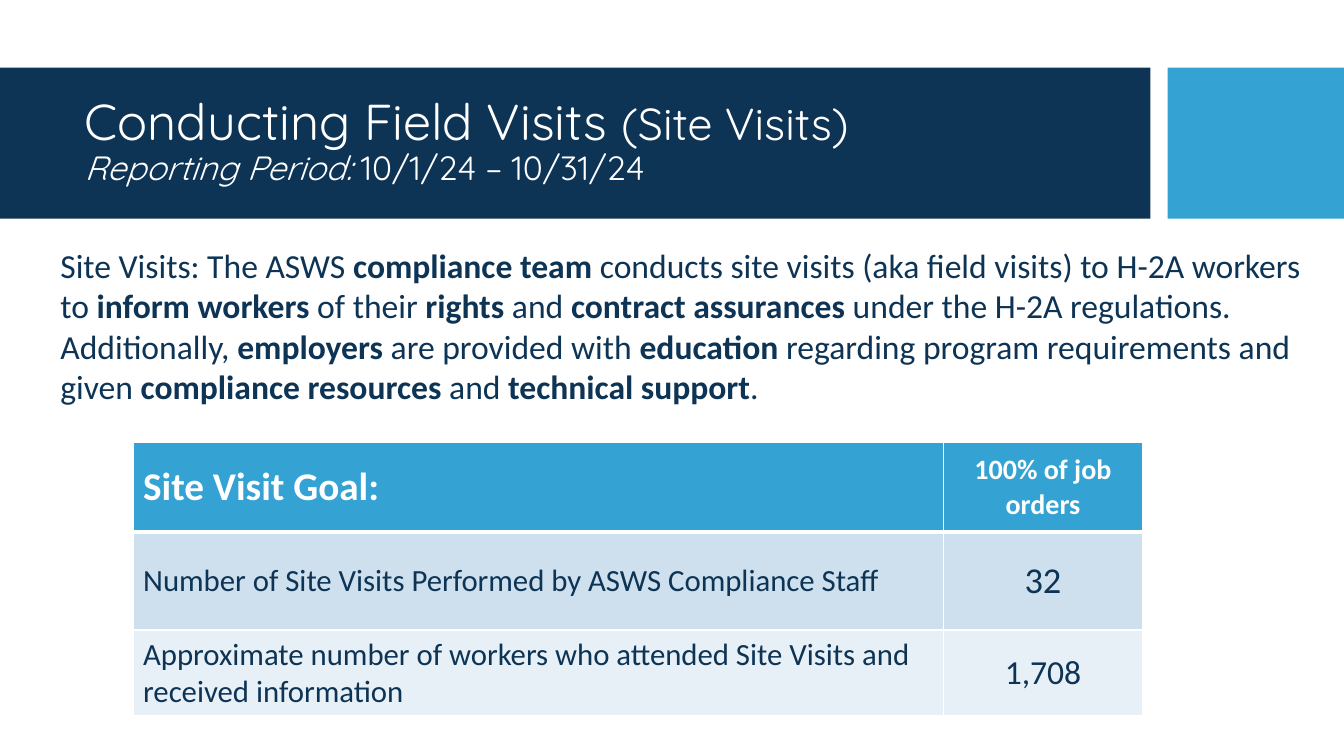
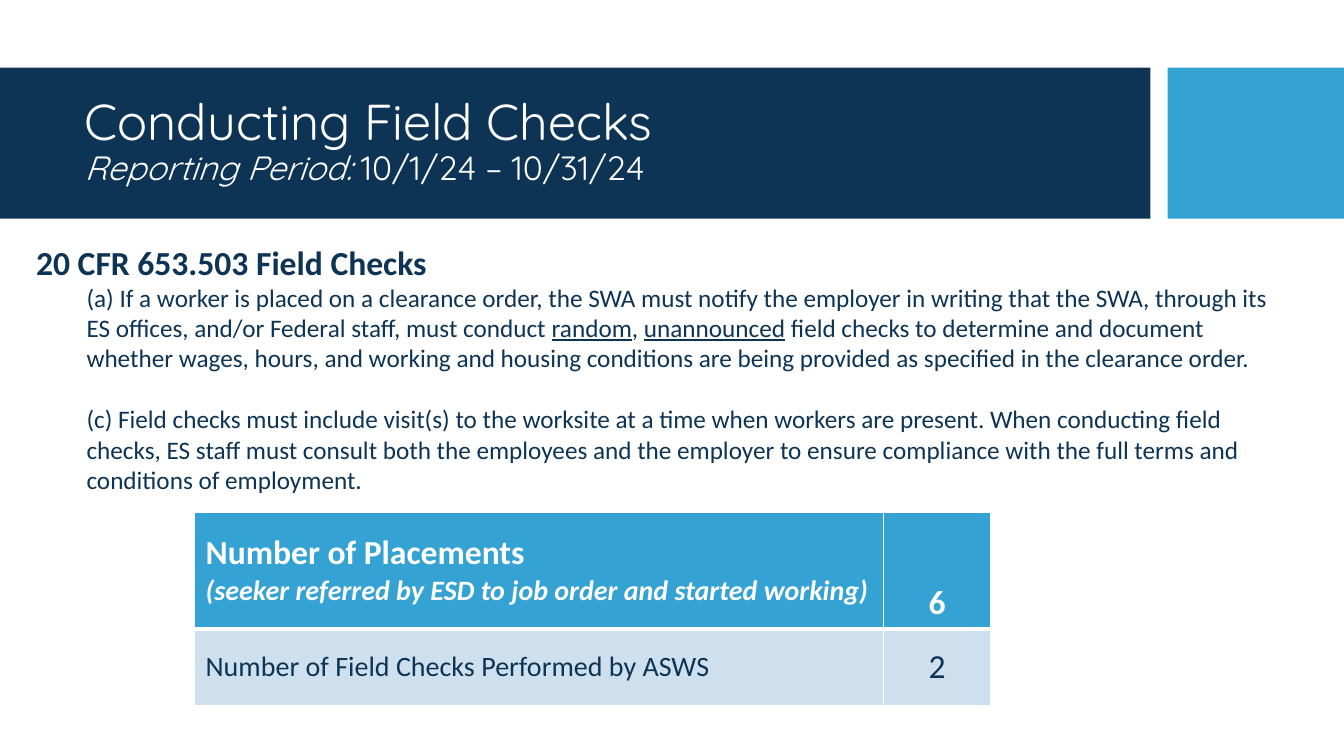
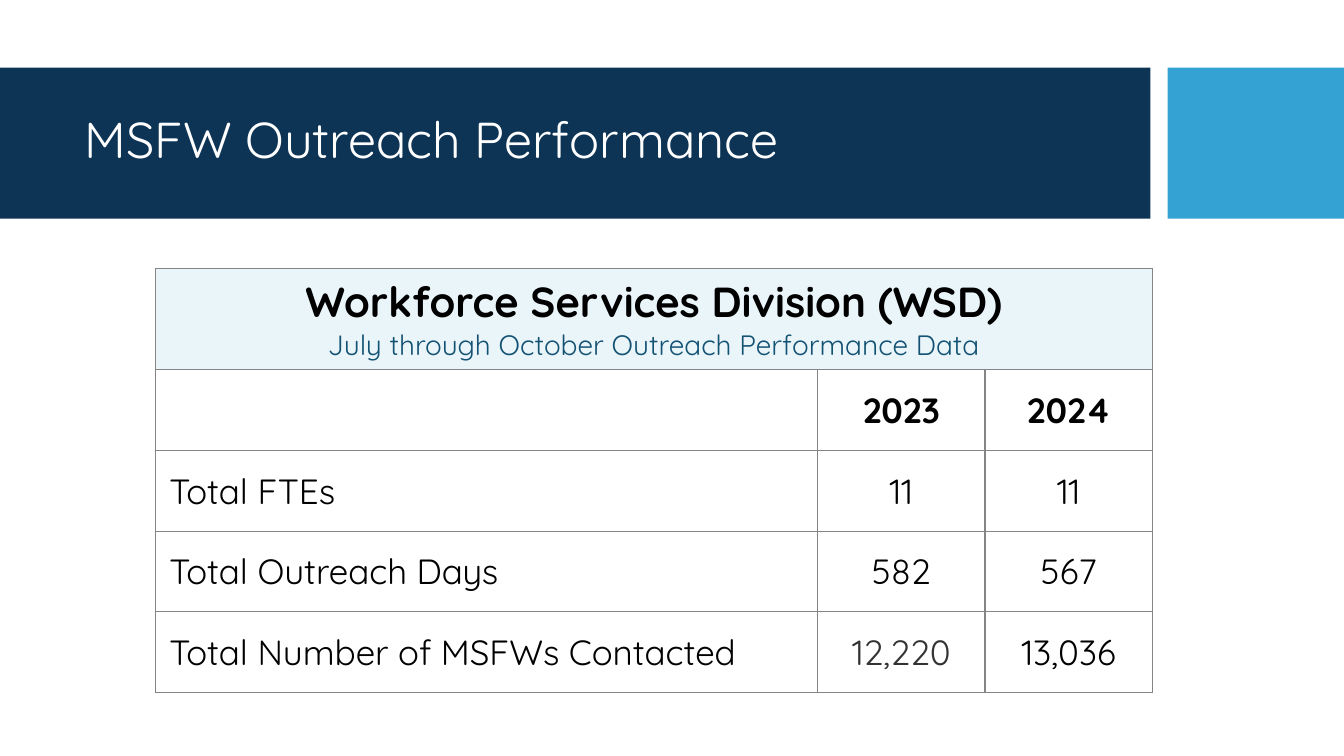
from lxml.etree import SubElement
from pptx import Presentation
from pptx.dml.color import RGBColor
from pptx.enum.shapes import MSO_SHAPE
from pptx.enum.text import MSO_ANCHOR, MSO_AUTO_SIZE, PP_ALIGN
from pptx.oxml.ns import qn
from pptx.util import Pt

PX = 9144  # 100 px to the inch
NAVY, SKY, WHITE, BLACK = "0D3455", "34A2D2", "FFFFFF", "000000"
PALE, PALER, ICE = "CEE0EE", "E8F0F7", "EAF5FA"
GREY, TEAL, CHARCOAL = "858585", "135273", "333333"
BODY_FONT, TITLE_FONT = "Calibri", "Quicksand"
PERIOD = [("Reporting Period: ", {"size": 24, "italic": True}),
          ("10/1/24 – 10/31/24", {"size": 24})]


def px(length):
    return round(length * PX)


def rgb(color):
    return RGBColor.from_string(color)


def add_spans(para, spans, **base):
    """Add (text, changes) runs, each styled by base plus its changes."""
    for text, changes in spans:
        style = {"bold": False, "italic": False, "underline": False, **base, **changes}
        span = para.add_run()
        span.text = text
        font = span.font
        font.name, font.size = style["font"], Pt(style["size"])
        font.color.rgb = rgb(style["color"])
        font.bold, font.italic = style["bold"], style["italic"]
        font.underline = style["underline"]


def add_para(frame, position):
    return frame.paragraphs[0] if position == 0 else frame.add_paragraph()


def add_band(slide, left, width, color):
    band = slide.shapes.add_shape(MSO_SHAPE.RECTANGLE, px(left), px(67), px(width), px(150))
    band.shadow.inherit = False
    band.fill.solid()
    band.fill.fore_color.rgb = rgb(color)
    band.line.fill.background()


def add_text_box(slide, left, top, width, height):
    box = slide.shapes.add_textbox(px(left), px(top), px(width), px(height))
    box.text_frame.word_wrap = True
    return box.text_frame


def add_titled_slide(deck, *lines):
    """Add a blank slide with the two bands and a title of one or more lines."""
    slide = deck.slides.add_slide(deck.slide_layouts[6])
    add_band(slide, 0, 1141, NAVY)
    add_band(slide, 1158, 175, SKY)
    frame = add_text_box(slide, 74, 82, 1051, 118)
    frame.vertical_anchor = MSO_ANCHOR.MIDDLE
    para = frame.paragraphs[0]
    para.line_spacing = 0.9
    for position, spans in enumerate(lines):
        if position:
            para.add_line_break()
        add_spans(para, spans, font=TITLE_FONT, size=36, color=WHITE)
    return slide


def add_body(slide, left, top, width, height, paragraphs):
    """Place paragraphs given as (spans, size, indent, space before)."""
    frame = add_text_box(slide, left, top, width, height)
    frame.auto_size = MSO_AUTO_SIZE.SHAPE_TO_FIT_TEXT
    for position, (spans, size, indent, gap) in enumerate(paragraphs):
        para = add_para(frame, position)
        para._p.get_or_add_pPr().set("marL", str(px(indent)))
        if gap:
            para.space_before = Pt(gap)
        add_spans(para, spans, font=BODY_FONT, size=size, color=NAVY)


def set_borders(cell, color, top=1, bottom=1):
    properties = cell._tc.get_or_add_tcPr()
    for side, width in (("L", 1), ("R", 1), ("T", top), ("B", bottom)):
        line = SubElement(properties, qn(f"a:ln{side}"), w=str(Pt(width)))
        fill = SubElement(line, qn("a:solidFill"))
        SubElement(fill, qn("a:srgbClr"), val=color)


def add_grid(slide, left, top, columns, rows, inset, border, head_rule, fills):
    """Add an empty table with its borders, fills and insets set."""
    table = slide.shapes.add_table(len(rows), len(columns), px(left), px(top),
                                   px(sum(columns)), px(sum(rows))).table
    table.first_row = table.horz_banding = False
    for column, width in zip(table.columns, columns):
        column.width = px(width)
    for index, (row, height, color) in enumerate(zip(table.rows, rows, fills)):
        row.height = px(height)
        for cell in row.cells:
            set_borders(cell, border, top=head_rule if index == 1 else 1,
                        bottom=head_rule if index == 0 else 1)
            if color:
                cell.fill.solid()
                cell.fill.fore_color.rgb = rgb(color)
            else:
                cell.fill.background()
            cell.margin_left = cell.margin_right = px(inset[0])
            cell.margin_top = cell.margin_bottom = px(inset[1])
            cell.vertical_anchor = MSO_ANCHOR.MIDDLE
    return table


def fill_cell(cell, *paragraphs, centred=False, **base):
    for position, (text, changes) in enumerate(paragraphs):
        para = add_para(cell.text_frame, position)
        para.alignment = PP_ALIGN.CENTER if centred else PP_ALIGN.LEFT
        add_spans(para, [(text, changes)], **base)


def add_count_table(slide, left, top, columns, rows, inset, content):
    """Add a blue-headed table; content has (label paragraphs, count, count size)."""
    table = add_grid(slide, left, top, columns, rows, inset, WHITE, 3, (SKY, PALE, PALER))
    for index, (labels, count, size) in enumerate(content):
        head = index == 0
        base = {"font": BODY_FONT, "color": WHITE if head else NAVY, "bold": head}
        fill_cell(table.cell(index, 0), *labels, **base)
        fill_cell(table.cell(index, 1), (count, {"size": size}), centred=True, **base)
    return table


def build_site_visits(deck):
    slide = add_titled_slide(
        deck, [("Conducting Field Visits ", {}), ("(Site Visits)", {"size": 32})], PERIOD)
    add_count_table(slide, 132, 439, (804, 197), (89, 97, 80), (10, 6), (
        ([("Site Visit Goal:", {"size": 28})], "100% of job orders", 20),
        ([("Number of Site Visits Performed by ASWS Compliance Staff", {"size": 22})], "32", 26),
        ([("Approximate number of workers who attended Site Visits and received information",
           {"size": 22})], "1,708", 24)))
    plain_then_bold = (
        "Site Visits: The ASWS ", "compliance team ",
        "conducts site visits (aka field visits) to H-2A workers to ", "inform workers ",
        "of their ", "rights ", "and ", "contract assurances ",
        "under the H-2A regulations. Additionally, ", "employers ",
        "are provided with ", "education",
        " regarding program requirements and given ", "compliance resources ",
        "and ", "technical support", ".")
    spans = [(text, {"bold": index % 2 == 1}) for index, text in enumerate(plain_then_bold)]
    add_body(slide, 0, 238, 1311, 172, [(spans, 24, 50, 0)])


def build_field_checks(deck):
    slide = add_titled_slide(deck, [("Conducting Field Checks", {})], PERIOD)
    table = add_count_table(slide, 193, 508, (683, 107), (116, 76), (11, 5), (
        ([("Number of Placements", {"size": 24}),
          ("(seeker referred by ESD to job order and started working)",
           {"size": 20, "italic": True})], "6", 24),
        ([("Number of Field Checks Performed by ASWS", {"size": 20})], "2", 24)))
    table.cell(0, 1).vertical_anchor = MSO_ANCHOR.BOTTOM
    notify = [
        ("(a) If a worker is placed on a clearance order, the SWA must notify the employer in "
         "writing that the SWA, through its ES offices, and/or Federal staff, must conduct ", {}),
        ("random", {"underline": True}), (", ", {}), ("unannounced", {"underline": True}),
        (" field checks to determine and document whether wages, hours, and working and housing "
         "conditions are being provided as specified in the clearance order.", {})]
    consult = [
        ("(c) Field checks must include visit(s) to the worksite at a time when workers are "
         "present. When conducting field checks, ES staff must consult both the employees and "
         "the employer to ensure compliance with the full terms and conditions of employment.",
         {})]
    add_body(slide, 26, 235, 1248, 263, [
        ([("20 CFR 653.503 Field Checks", {"bold": True})], 24, 0, 0),
        (notify, 18, 50, 0), (consult, 18, 50, 22)])


def build_outreach(deck):
    slide = add_titled_slide(deck, [("MSFW Outreach Performance", {})])
    table = add_grid(slide, 154, 266, (657, 166, 166), (101, 80, 80, 80, 80), (14, 7),
                     GREY, 1, (ICE, None, None, None, None))
    heading = table.cell(0, 0)
    heading.merge(table.cell(0, 2))
    fill_cell(heading, ("Workforce Services Division (WSD)",
                        {"size": 30, "color": BLACK, "bold": True}),
              ("July through October Outreach Performance Data", {"size": 20, "color": TEAL}),
              centred=True, font=TITLE_FONT)
    content = (("", "2023", "2024"),
               ("Total FTEs", "11", "11"),
               ("Total Outreach Days", "582", "567"),
               ("Total Number of MSFWs Contacted", "12,220", "13,036"))
    for row, texts in enumerate(content, start=1):
        for column, text in enumerate(texts):
            if text:
                color = CHARCOAL if text == "12,220" else BLACK
                fill_cell(table.cell(row, column), (text, {}), centred=column > 0,
                          font=TITLE_FONT, size=25, color=color, bold=row == 1)


def main():
    deck = Presentation()
    deck.slide_width, deck.slide_height = px(1333), px(750)
    build_site_visits(deck)
    build_field_checks(deck)
    build_outreach(deck)
    deck.save("out.pptx")


if __name__ == "__main__":
    main()
